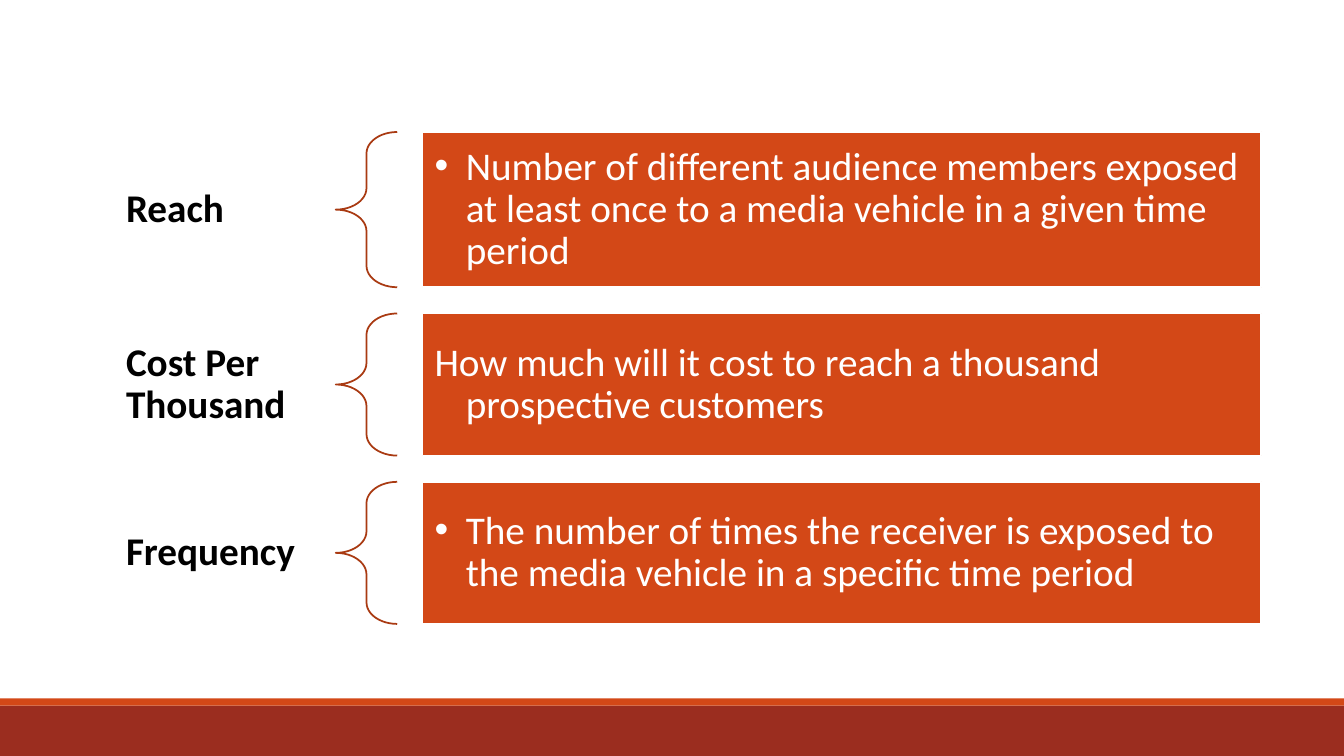
from dataclasses import dataclass
from typing import Any

from lxml.etree import SubElement
from pptx import Presentation
from pptx.dml.color import RGBColor as Rgb
from pptx.enum.shapes import MSO_SHAPE as Kind
from pptx.enum.text import MSO_ANCHOR as Anchor, PP_ALIGN as Align
from pptx.oxml.ns import qn
from pptx.util import Inches, Pt


@dataclass(frozen=True)
class Theme:
    font: str = "Calibri"
    size: int = 28
    edge: float = 1.25
    rust: str = "D34817"
    brick: str = "9B2D1F"
    brace: str = "A93A12"
    white: str = "FFFFFF"
    black: str = "000000"


@dataclass(frozen=True)
class Col:
    left: float
    width: float


@dataclass(frozen=True)
class Band:
    top: float
    height: float


@dataclass(frozen=True)
class Term:
    name: str
    note: str
    height: float = 1.41
    dot: bool = True


LOOK = Theme()
WIDTH, HEIGHT = 13.33, 7.5

# Grid: one column each for names, braces and notes
FULL = Col(0, WIDTH)
NAME, BRACE, NOTE = Col(1.03, 2.31), Col(3.33, 0.61), Col(4.19, 8.32)
TOP, GAP = 1.31, 0.26
HANG = 0.31

TERMS = [
    Term("Reach", "Number of different audience members exposed at least once "
         "to a media vehicle in a given time period", height=1.54),
    Term("Cost Per Thousand", "How much will it cost to reach a thousand "
         "prospective customers", dot=False),
    Term("Frequency", "The number of times the receiver is exposed to the "
         "media vehicle in a specific time period"),
]


def apply(item: Any, form: dict[str, Any]) -> None:
    for key, value in form.items():
        setattr(item, key, value)


def place(col: Col, row: Band) -> list[int]:
    return [Inches(n) for n in (col.left, row.top, col.width, row.height)]


def draw(slide: Any, kind: Kind, col: Col, row: Band,
         fill: str = "", line: str = "") -> Any:
    shape = slide.shapes.add_shape(kind, *place(col, row))
    shape.shadow.inherit = False
    for part, tint in ((shape.fill, fill), (shape.line.fill, line)):
        if tint:
            part.solid()
            part.fore_color.rgb = Rgb.from_string(tint)
        else:
            part.background()
    if line:
        shape.line.width = Pt(LOOK.edge)
    return shape


def write(shape: Any, text: str, tint: str, inset: tuple[float, float],
          bold: bool = False) -> Any:
    side, edge = (Inches(n) for n in inset)
    frame = shape.text_frame
    apply(frame, {"word_wrap": True, "vertical_anchor": Anchor.MIDDLE,
                  "margin_left": side, "margin_right": side,
                  "margin_top": edge, "margin_bottom": edge})
    para = frame.paragraphs[0]
    apply(para, {"text": text, "alignment": Align.LEFT, "line_spacing": 0.9})
    apply(para.font, {"name": LOOK.font, "size": Pt(LOOK.size), "bold": bold})
    para.font.color.rgb = Rgb.from_string(tint)
    return para


def indent(para: Any, dot: bool) -> None:
    props = para._p.get_or_add_pPr()
    props.set("marL", str(Inches(HANG)))
    props.set("indent", str(-Inches(HANG)))
    if dot:
        SubElement(props, qn("a:buFont")).set("typeface", "Arial")
        SubElement(props, qn("a:buChar")).set("char", "•")
    else:
        SubElement(props, qn("a:buNone"))


def add_term(slide: Any, term: Term, row: Band) -> None:
    label = slide.shapes.add_textbox(*place(NAME, row))
    write(label, term.name, LOOK.black, (0.22, 0.08), bold=True)
    brace = draw(slide, Kind.LEFT_BRACE, BRACE, row, line=LOOK.brace)
    brace.adjustments[0] = 0.35
    brace.adjustments[1] = 0.5
    card = draw(slide, Kind.RECTANGLE, NOTE, row, LOOK.rust, LOOK.white)
    indent(write(card, term.note, LOOK.white, (0.12, 0.12)), term.dot)


def main() -> None:
    deck = Presentation()
    apply(deck, {"slide_width": Inches(WIDTH), "slide_height": Inches(HEIGHT)})
    slide = deck.slides.add_slide(deck.slide_layouts[6])

    # Footer bands
    for row, tint in ((Band(7, 0.5), LOOK.brick), (Band(6.93, 0.07), LOOK.rust)):
        draw(slide, Kind.RECTANGLE, FULL, row, tint)

    # Terms, stacked with equal gaps
    top = TOP
    for term in TERMS:
        add_term(slide, term, Band(top, term.height))
        top += term.height + GAP

    deck.save("out.pptx")


if __name__ == "__main__":
    main()
